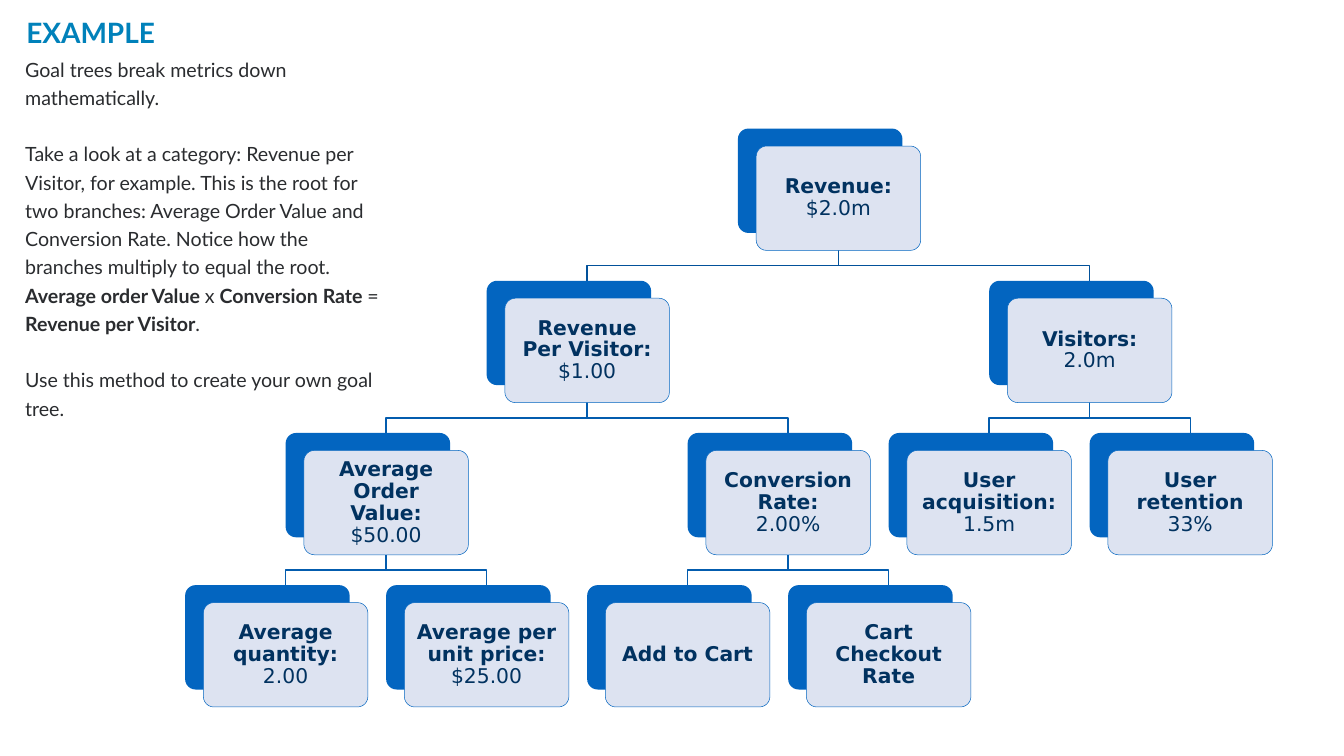
import dataclasses
from typing import Tuple

import pptx
import pptx.dml.color
import pptx.enum.shapes
import pptx.enum.text
import pptx.util

Cm = pptx.util.Cm
Pt = pptx.util.Pt
Align = pptx.enum.text.PP_ALIGN
Anchor = pptx.enum.text.MSO_ANCHOR


@dataclasses.dataclass(frozen=True)
class Theme:
    background: str = "FFFFFF"
    title: str = "0081BA"
    body: str = "2A2C2F"
    accent: str = "0365C0"
    card: str = "DDE3F1"
    card_text: str = "013260"
    root_branch: str = "02519A"
    branch: str = "035CAE"
    text_font: str = "Lato"
    card_font: str = "DejaVu Sans"
    title_size: int = 40
    body_size: int = 28
    card_size: int = 29


@dataclasses.dataclass(frozen=True)
class Metric:
    """A node of the goal tree; a leaf has its own column, a root sits midway over its branches."""
    name: str
    value: str = ""
    column: float = 0
    branches: Tuple["Metric", ...] = ()

    @property
    def place(self) -> float:
        if not self.branches:
            return self.column
        return (self.branches[0].place + self.branches[-1].place) / 2


THEME = Theme()
TREE_LEFT, TREE_TOP = 9.33, 6.48
COLUMN_STEP, ROW_STEP = 10.13, 7.67
CARD_WIDTH, CARD_HEIGHT = 8.29, 5.26
FRONT_DX, FRONT_DY = 0.92, 0.88
ELBOW_RISE = 0.76
LINE_SPACING = 1.2

GOAL_TREE = Metric("Revenue:", "$2.0m", branches=(
    Metric("Revenue Per Visitor:", "$1.00", branches=(
        Metric("Average Order Value:", "$50.00", branches=(
            Metric("Average quantity:", "2.00", 0),
            Metric("Average per unit price:", "$25.00", 1),
        )),
        Metric("Conversion Rate:", "2.00%", branches=(
            Metric("Add to Cart", column=2),
            Metric("Cart Checkout Rate", column=3),
        )),
    )),
    Metric("Visitors:", "2.0m", branches=(
        Metric("User acquisition:", "1.5m", 3.5),
        Metric("User retention", "33%", 4.5),
    )),
))

# Each paragraph is a row of (wording, bold) pieces.
EXPLANATION = (
    (("Goal trees break metrics down mathematically.", False),),
    (
        ("Take a look at a category: Revenue per Visitor, for example. This is the root for "
         "two branches: Average Order Value and Conversion Rate. Notice how the branches "
         "multiply to equal the root. ", False),
        ("Average order Value ", True), ("x ", False),
        ("Conversion Rate ", True), ("= ", False),
        ("Revenue per Visitor", True), (".", False),
    ),
    (("Use this method to create your own goal tree.", False),),
)


def rgb(code: str) -> pptx.dml.color.RGBColor:
    return pptx.dml.color.RGBColor.from_string(code)


def style_run(run, font: str, size: float, color: str, bold: bool) -> None:
    run.font.name = font
    run.font.size = Pt(size)
    run.font.color.rgb = rgb(color)
    run.font.bold = bold


def set_insets(frame, inset: float) -> None:
    frame.margin_left = frame.margin_right = Cm(inset)
    frame.margin_top = frame.margin_bottom = Cm(inset)


def corner(metric: Metric, level: int) -> Tuple[float, float]:
    """Left and top of the metric's rear card, in centimetres."""
    return TREE_LEFT + metric.place * COLUMN_STEP, TREE_TOP + level * ROW_STEP


def draw_branches(slide, root: Metric, level: int = 0) -> None:
    left, top = corner(root, level)
    start = (left + FRONT_DX + CARD_WIDTH / 2, top + CARD_HEIGHT)
    for child in root.branches:
        child_left, child_top = corner(child, level + 1)
        end_x = child_left + FRONT_DX + CARD_WIDTH / 2
        elbow_y = child_top - ELBOW_RISE
        route = ((start[0], elbow_y), (end_x, elbow_y), (end_x, child_top))
        builder = slide.shapes.build_freeform(Cm(start[0]), Cm(start[1]))
        builder.add_line_segments([(Cm(x), Cm(y)) for x, y in route], close=False)
        branch = builder.convert_to_shape()
        branch.shadow.inherit = False
        branch.fill.background()
        branch.line.color.rgb = rgb(THEME.branch if level else THEME.root_branch)
        branch.line.width = Pt(2)
        draw_branches(slide, child, level + 1)


def add_card(slide, left: float, top: float, fill: str):
    card = slide.shapes.add_shape(
        pptx.enum.shapes.MSO_SHAPE.ROUNDED_RECTANGLE,
        Cm(left), Cm(top), Cm(CARD_WIDTH), Cm(CARD_HEIGHT))
    card.adjustments[0] = 0.1
    card.shadow.inherit = False
    card.fill.solid()
    card.fill.fore_color.rgb = rgb(fill)
    card.line.fill.background()
    return card


def draw_metrics(slide, metric: Metric, level: int = 0) -> None:
    left, top = corner(metric, level)
    add_card(slide, left, top, THEME.accent)
    front = add_card(slide, left + FRONT_DX, top + FRONT_DY, THEME.card)
    front.line.color.rgb = rgb(THEME.accent)
    front.line.width = Pt(0.75)
    frame = front.text_frame
    frame.word_wrap = True
    frame.vertical_anchor = Anchor.MIDDLE
    set_insets(frame, 0.4)
    label = frame.paragraphs[0]
    label.text = "\v".join(filter(None, (metric.name, metric.value)))
    label.alignment = Align.CENTER
    label.line_spacing = 0.9
    for index, run in enumerate(label.runs):
        style_run(run, THEME.card_font, THEME.card_size, THEME.card_text, bold=index == 0)
    for child in metric.branches:
        draw_metrics(slide, child, level + 1)


def write_title(slide) -> None:
    title = slide.shapes.title
    title.left, title.top, title.width, title.height = Cm(1.07), Cm(0.64), Cm(61.98), Cm(4.65)
    frame = title.text_frame
    frame.text = "EXAMPLE"
    frame.vertical_anchor = Anchor.TOP
    frame.paragraphs[0].alignment = Align.LEFT
    style_run(frame.paragraphs[0].runs[0], THEME.text_font, THEME.title_size, THEME.title, True)


def write_explanation(slide) -> None:
    explanation = slide.shapes.add_textbox(Cm(1.27), Cm(2.67), Cm(18.42), Cm(18.64))
    frame = explanation.text_frame
    frame.word_wrap = True
    frame.auto_size = pptx.enum.text.MSO_AUTO_SIZE.SHAPE_TO_FIT_TEXT
    set_insets(frame, 0)
    for index, pieces in enumerate(EXPLANATION):
        paragraph = frame.add_paragraph() if index else frame.paragraphs[0]
        paragraph.line_spacing = LINE_SPACING
        if index:
            paragraph.space_before = Pt(40.3)
        for wording, bold in pieces:
            run = paragraph.add_run()
            run.text = wording
            style_run(run, THEME.text_font, THEME.body_size, THEME.body, bold)


def main() -> None:
    presentation = pptx.Presentation()
    presentation.slide_width, presentation.slide_height = Cm(67.73), Cm(38.1)
    slide = presentation.slides.add_slide(presentation.slide_layouts[5])
    slide.background.fill.solid()
    slide.background.fill.fore_color.rgb = rgb(THEME.background)
    draw_branches(slide, GOAL_TREE)
    draw_metrics(slide, GOAL_TREE)
    write_title(slide)
    write_explanation(slide)
    presentation.save("out.pptx")


if __name__ == "__main__":
    main()
